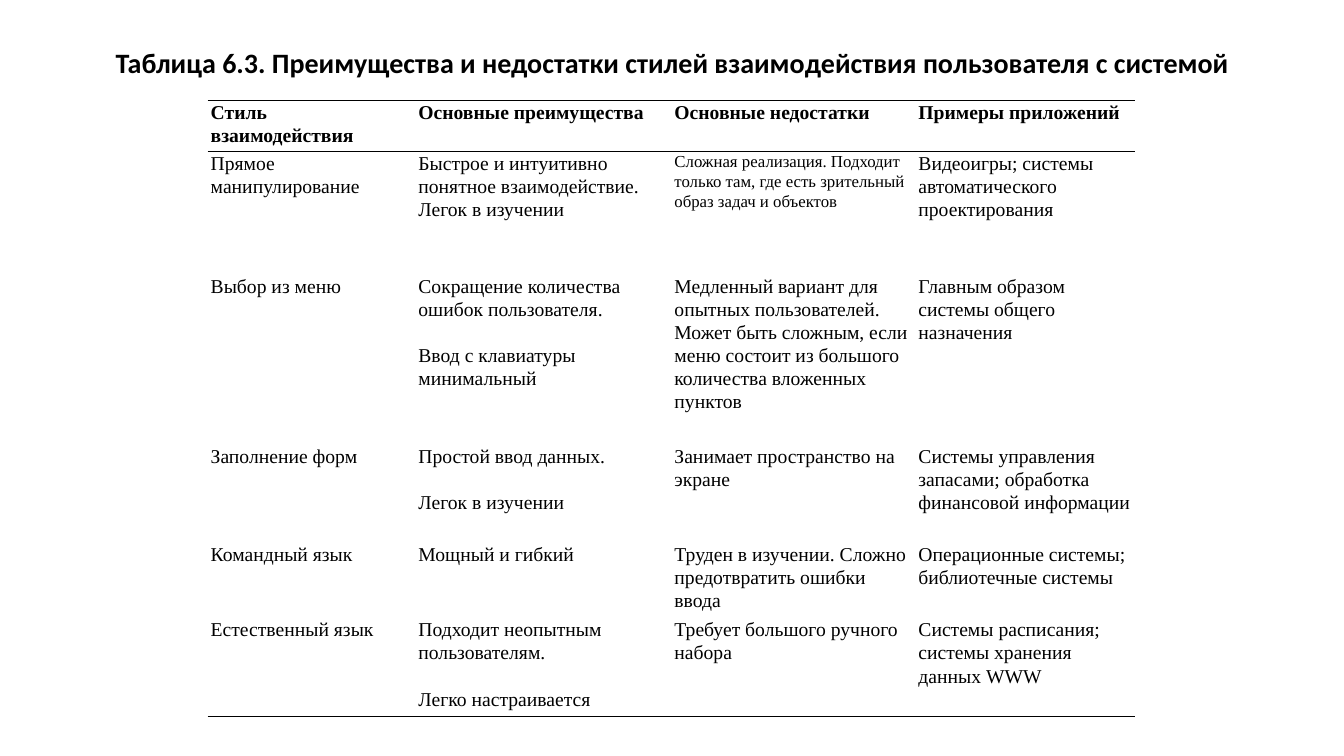
from lxml import etree
from pptx import Presentation
from pptx.dml.color import RGBColor
from pptx.enum.text import MSO_ANCHOR, PP_ALIGN
from pptx.oxml.ns import qn
from pptx.util import Pt

PX = 9144
TOP = MSO_ANCHOR.TOP
CENTER = PP_ALIGN.CENTER
COLORS = {"ink": "000000", "paper": "FFFFFF"}
TITLE = "Таблица 6.3. Преимущества и недостатки стилей взаимодействия пользователя с системой"
WIDTHS = [206, 254, 242, 218]
HEIGHTS = [47, 122, 169, 97, 72, 97]
ROWS = [
    ["Стиль взаимодействия", "Основные преимущества",
     "Основные недостатки", "Примеры приложений"],
    ["Прямое манипулирование",
     "Быстрое и интуитивно понятное взаимодействие. Легок в изучении",
     "Сложная реализация. Подходит только там, где есть зрительный образ задач и объектов",
     "Видеоигры; системы автоматического проектирования"],
    ["Выбор из меню",
     "Сокращение количества ошибок пользователя.\nВвод с клавиатуры минимальный",
     "Медленный вариант для опытных пользователей. Может быть сложным, "
     "если меню состоит из большого количества вложенных пунктов",
     "Главным образом системы общего назначения"],
    ["Заполнение форм", "Простой ввод данных.\nЛегок в изучении",
     "Занимает пространство на экране",
     "Системы управления запасами; обработка финансовой информации"],
    ["Командный язык", "Мощный и гибкий",
     "Труден в изучении. Сложно предотвратить ошибки ввода",
     "Операционные системы; библиотечные системы"],
    ["Естественный язык",
     "Подходит неопытным пользователям.\nЛегко настраивается",
     "Требует большого ручного набора",
     "Системы расписания; системы хранения данных WWW"],
]
SMALL = (1, 2)
HEAD = {"name": "Calibri", "size": Pt(20), "bold": True}
BODY = {"name": "Times New Roman", "size": Pt(14), "bold": False}
INSETS = {"margin_left": 3 * PX, "margin_right": 3 * PX,
          "margin_top": 0, "margin_bottom": 0, "vertical_anchor": TOP}


def apply(target, values):
    for key, value in values.items():
        setattr(target, key, value)


def write(frame, text, font, layout, gap=0):
    for i, line in enumerate(text.split("\n")):
        para = frame.paragraphs[0] if i == 0 else frame.add_paragraph()
        apply(para, layout)
        para.space_before = Pt(gap if i else 0)
        run = para.add_run()
        run.text = line
        apply(run.font, font)
        run.font.color.rgb = RGBColor.from_string(COLORS["ink"])


def border(cell, sides):
    props = cell._tc.get_or_add_tcPr()
    for side in "LRTB":
        line = etree.SubElement(props, qn(f"a:ln{side}"), w=str(Pt(1)))
        if side in sides:
            fill = etree.SubElement(line, qn("a:solidFill"))
            etree.SubElement(fill, qn("a:srgbClr"), val=COLORS["ink"])
        else:
            etree.SubElement(line, qn("a:noFill"))


def add_title(slide, box):
    frame = slide.shapes.add_textbox(*[n * PX for n in box]).text_frame
    apply(frame, {"word_wrap": True, "vertical_anchor": TOP})
    write(frame, TITLE, HEAD, {"alignment": CENTER, "line_spacing": 0.9})


def add_grid(slide, box):
    table = slide.shapes.add_table(len(ROWS), len(WIDTHS), *[n * PX for n in box]).table
    apply(table, {"first_row": False, "horz_banding": False})
    for column, width in zip(table.columns, WIDTHS):
        column.width = width * PX
    for row, height in zip(table.rows, HEIGHTS):
        row.height = height * PX
    rules = {0: "TB", 1: "T", len(ROWS) - 1: "B"}
    for r, texts in enumerate(ROWS):
        for c, text in enumerate(texts):
            cell = table.cell(r, c)
            apply(cell, INSETS)
            border(cell, rules.get(r, ""))
            cell.fill.solid()
            cell.fill.fore_color.rgb = RGBColor.from_string(COLORS["paper"])
            size = Pt(12 if (r, c) == SMALL else 14)
            font = {**BODY, "size": size, "bold": r == 0}
            write(cell.text_frame, text, font, {"line_spacing": 1.07}, gap=16.5)


def main():
    deck = Presentation()
    apply(deck, {"slide_width": 1333 * PX, "slide_height": 750 * PX})
    slide = deck.slides.add_slide(deck.slide_layouts[6])
    add_title(slide, (92, 44, 1150, 66))
    add_grid(slide, (206, 100, sum(WIDTHS), sum(HEIGHTS)))
    deck.save("out.pptx")


if __name__ == "__main__":
    main()
